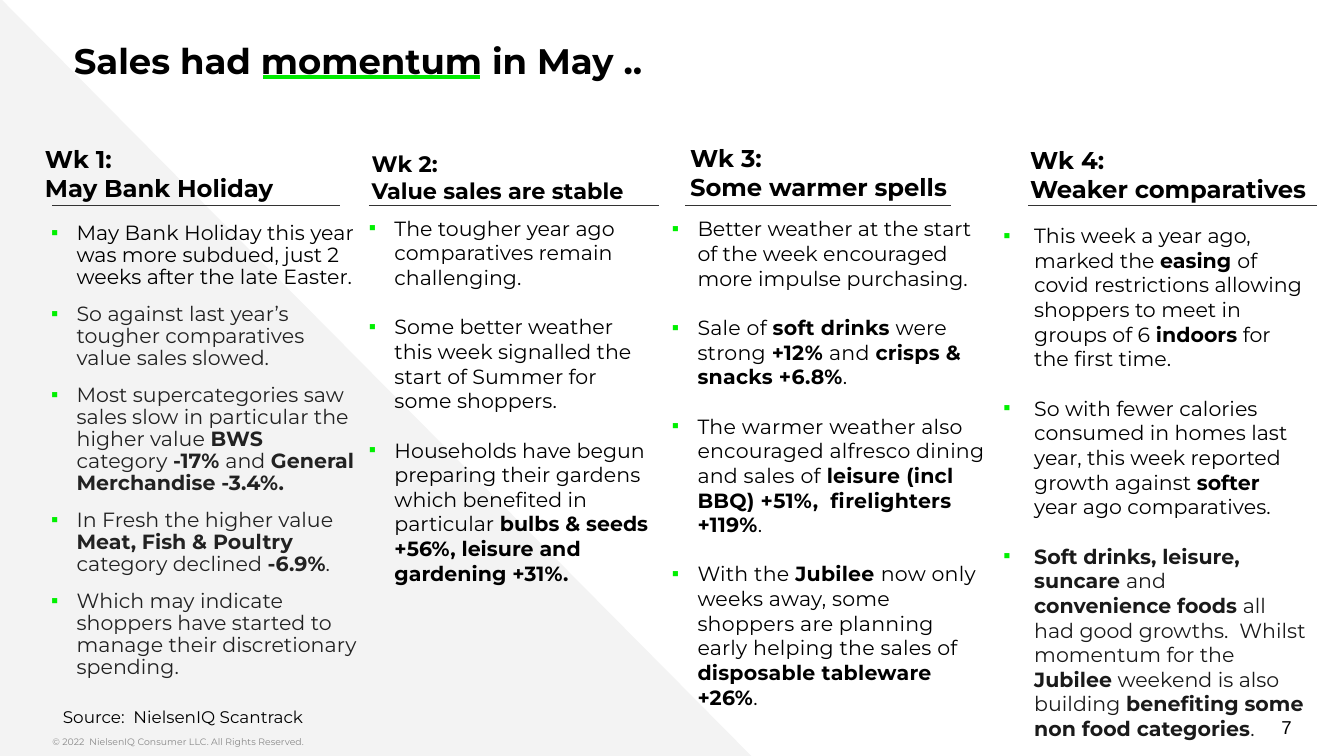
import lxml.etree
import pptx
import pptx.dml.color
import pptx.enum.shapes
import pptx.enum.text
import pptx.oxml.ns
import pptx.util

PX = 4572
ANCHOR = pptx.enum.text.MSO_ANCHOR
ALIGN = pptx.enum.text.PP_ALIGN
BLACK, CHARCOAL, INK = "000000", "222222", "1A1A1A"
GREEN, BULLET_GREEN, RULE_GREY = "00EB00", "00F000", "333333"

WEEKS = [
    {
        "rule": (78, 306, 428), "heading": (-11, -70, 486), "heading_size": 13,
        "body": (-102, 16, 556, 618), "indent": (138, 38), "after": 8, "line": 11.8,
        "title": ["Wk 1:", "May Bank Holiday"],
        "points": [
            (BLACK, 0, "May Bank Holiday this year was more subdued, just 2 weeks after the late Easter."),
            (CHARCOAL, 0, "So against last year’s tougher comparatives value sales slowed."),
            (CHARCOAL, 0, "Most supercategories saw sales slow in particular the higher value **BWS** category "
                          "**-17% **and **General Merchandise -3.4%.**"),
            (CHARCOAL, 0, "In Fresh the higher value **Meat, Fish & Poultry** category declined **-6.9%**."),
            (CHARCOAL, 0, "Which may indicate shoppers have started to manage their discretionary spending."),
        ],
    },
    {
        "rule": (549, 306, 431), "heading": (4, -68, 508), "heading_size": 12,
        "body": (-2, 5, 430, 660), "indent": (40, 38), "after": 13.2, "line": None,
        "title": ["Wk 2:", "Value sales are stable"],
        "points": [
            (BLACK, 0, "The tougher year ago comparatives remain challenging."),
            (BLACK, 0, "Some better weather this week signalled the start of Summer for some shoppers."),
            (BLACK, 0, "Households have begun preparing their gardens which benefited in particular "
                       "**bulbs & seeds +56%, leisure and gardening +31%.**"),
        ],
    },
    {
        "rule": (1020, 306, 395), "heading": (7, -72, 468), "heading_size": 13,
        "body": (-20, 6, 468, 716), "indent": (38, 38), "after": 13.2, "line": None,
        "title": ["Wk 3:", "Some warmer spells"],
        "points": [
            (BLACK, 0, "Better weather at the start of the week encouraged more impulse purchasing."),
            (BLACK, 10, "Sale of **soft drinks** were strong **+12% **and **crisps & snacks +6.8%**."),
            (BLACK, 10, "The warmer weather also encouraged alfresco dining and sales of "
                        "**leisure (incl BBQ) +51%,  firelighters +119%**."),
            (BLACK, 10, "With the **Jubilee **now only weeks away, some shoppers are planning early "
                        "helping the sales of **disposable tableware +26%**."),
        ],
    },
    {
        "rule": (1530, 306, 430), "heading": (3, -69, 508), "heading_size": 13,
        "body": (-41, 16, 456, 716), "indent": (50, 46), "after": 13.2, "line": None,
        "title": ["Wk 4:", "Weaker comparatives"],
        "points": [
            (BLACK, 0, "This week a year ago, marked the **easing **of covid restrictions allowing "
                       "shoppers to meet in groups of 6 **indoors** for the first time."),
            (BLACK, 0, "So with fewer calories consumed in homes last year, this week reported growth "
                       "against **softer** year ago comparatives."),
            (INK, 0, "**Soft drinks, leisure, suncare **and **convenience foods** all had good growths.  "
                     "Whilst momentum for the **Jubilee** weekend is also building "
                     "**benefiting some non food categories**."),
        ],
    },
]


def color(hex_text):
    """Return the RGB colour for a hex string."""
    return pptx.dml.color.RGBColor.from_string(hex_text)


def add_box(page, bounds, inset=(0, 10), anchor=ANCHOR.TOP):
    """Add a wrapping text box and return its text frame."""
    frame = page.shapes.add_textbox(*[value * PX for value in bounds]).text_frame
    frame.word_wrap = True
    frame.vertical_anchor = anchor
    frame.margin_left = frame.margin_right = inset[0] * PX
    frame.margin_top = frame.margin_bottom = inset[1] * PX
    return frame


def add_spans(para, text, size, hex_text=BLACK, bold=False, font="Montserrat", tracking=0):
    """Add runs to a paragraph, switching weight at each double asterisk."""
    for index, part in enumerate(text.split("**")):
        if part:
            span = para.add_run()
            span.text = part
            span.font.name = font
            span.font.size = pptx.util.Pt(size)
            span.font.bold = bold or index % 2 == 1
            span.font.color.rgb = color(hex_text)
            if tracking:
                span._r.get_or_add_rPr().set("spc", str(tracking))


def add_paragraph(frame, index):
    """Return the first paragraph of a frame, or a new one after it."""
    return frame.add_paragraph() if index else frame.paragraphs[0]


def add_line(page, left, top, width, hex_text, weight):
    """Add a horizontal line without a shadow."""
    line = page.shapes.add_connector(
        pptx.enum.shapes.MSO_CONNECTOR.STRAIGHT,
        left * PX, top * PX, (left + width) * PX, top * PX)
    line.line.color.rgb = color(hex_text)
    line.line.width = pptx.util.Pt(weight)
    lxml.etree.SubElement(line._element.spPr, pptx.oxml.ns.qn("a:effectLst"))


def add_bullet(para, indent):
    """Give a paragraph a green square bullet and a hanging indent."""
    qn = pptx.oxml.ns.qn
    properties = para._p.get_or_add_pPr()
    properties.set("marL", str(indent[0] * PX))
    properties.set("indent", str(-indent[1] * PX))
    bullet_color = lxml.etree.SubElement(properties, qn("a:buClr"))
    lxml.etree.SubElement(bullet_color, qn("a:srgbClr"), val=BULLET_GREEN)
    lxml.etree.SubElement(properties, qn("a:buFont"), typeface="Arial")
    lxml.etree.SubElement(properties, qn("a:buChar"), char="▪")


def add_week(page, week):
    """Place a week's heading and bullets relative to its rule."""
    left, top, width = week["rule"]
    add_line(page, left, top, width, RULE_GREY, 0.75)

    dx, dy, heading_width = week["heading"]
    heading = add_box(page, (left + dx, top + dy, heading_width, 86), (0, 20), ANCHOR.BOTTOM)
    for index, text in enumerate(week["title"]):
        add_spans(add_paragraph(heading, index), text, week["heading_size"], bold=True)

    dx, dy, body_width, body_height = week["body"]
    body = add_box(page, (left + dx, top + dy, body_width, body_height))
    for index, (hex_text, tracking, text) in enumerate(week["points"]):
        para = add_paragraph(body, index)
        add_bullet(para, week["indent"])
        para.space_after = pptx.util.Pt(week["after"])
        if week["line"]:
            para.line_spacing = pptx.util.Pt(week["line"])
        add_spans(para, text, 11, hex_text, tracking=tracking)


def add_backdrop(page, left, top, width, height):
    """Add the pale triangle behind the text."""
    triangle = page.shapes.add_shape(
        pptx.enum.shapes.MSO_SHAPE.RIGHT_TRIANGLE,
        left * PX, top * PX, width * PX, height * PX)
    triangle.shadow.inherit = False
    triangle.fill.solid()
    triangle.fill.fore_color.rgb = color("F3F3F3")
    triangle.line.fill.background()


def add_title(page, left, top, width, height):
    """Add the slide title with its green underline."""
    add_line(page, left + 282, top + 77, 322, GREEN, 2.25)
    title = add_box(page, (left, top, width, height), (0, 20))
    add_spans(title.paragraphs[0], "Sales had momentum in May ..", 19, bold=True)


def add_footer(page, left, top):
    """Add the source, copyright line and page number."""
    source = add_box(page, (left, top, 1032, 50), (20, 10))
    add_spans(source.paragraphs[0], "Source:  NielsenIQ Scantrack", 9)
    rights = add_box(page, (left + 4, top + 44, 1108, 40))
    add_spans(rights.paragraphs[0],
              "© 2022  NielsenIQ Consumer LLC. All Rights Reserved.", 5, "888888")
    number = add_box(page, (left + 1398, top + 10, 450, 60), anchor=ANCHOR.MIDDLE)
    number.paragraphs[0].alignment = ALIGN.RIGHT
    add_spans(number.paragraphs[0], "7", 10, font="Arial")


def main():
    """Build and save the deck."""
    deck = pptx.Presentation()
    deck.slide_width, deck.slide_height = 2000 * PX, 1125 * PX
    page = deck.slides.add_slide(deck.slide_layouts[6])
    add_backdrop(page, 0, -3, 1118, 1128)
    add_title(page, 110, 38, 1890, 86)
    for week in WEEKS:
        add_week(page, week)
    add_footer(page, 74, 1042)
    deck.save("out.pptx")


if __name__ == "__main__":
    main()
